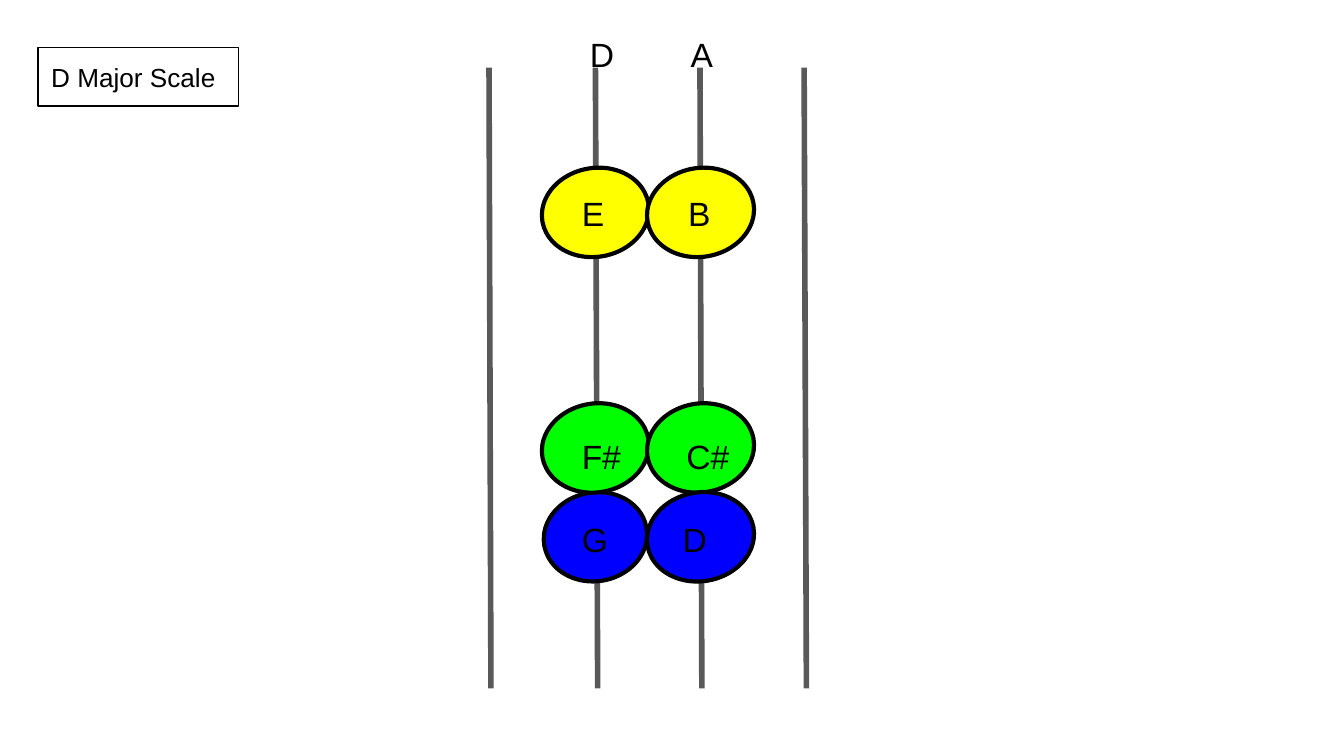
"""Build a fingering chart of the D major scale on the D and A strings."""
from dataclasses import dataclass

import pptx
import pptx.dml.color
import pptx.enum.shapes
import pptx.enum.text
import pptx.oxml
import pptx.oxml.ns
import pptx.util

Pt = pptx.util.Pt


@dataclass(frozen=True)
class Theme:
    font: str = "Arial"
    ink: str = "000000"
    string: str = "595959"
    first: str = "FFFF00"
    second: str = "00FF00"
    third: str = "0000FF"
    title_size: int = 14
    note_size: int = 18


THEME = Theme()


def rgb(value):
    return pptx.dml.color.RGBColor.from_string(value)


def add_run(p, text, size):
    r = p.add_run()
    r.text = text
    r.font.name = THEME.font
    r.font.size = Pt(size)
    r.font.color.rgb = rgb(THEME.ink)


def set_frame(tf, anchor):
    tf.word_wrap = True
    tf.vertical_anchor = anchor
    tf.margin_left = tf.margin_right = tf.margin_top = tf.margin_bottom = Pt(7.2)


def add_string(s, top_x, bottom_x):
    ln = s.shapes.add_connector(
        pptx.enum.shapes.MSO_CONNECTOR.STRAIGHT,
        Pt(top_x), Pt(36.2), Pt(bottom_x), Pt(368.8))
    ln.line.color.rgb = rgb(THEME.string)
    ln.line.width = Pt(3)
    ln._element.spPr.append(pptx.oxml.ns.qn("a:effectLst") and
                            pptx.oxml.parse_xml("<a:effectLst %s/>" % pptx.oxml.ns.nsdecls("a")))


def add_outlined(s, kind, box, fill, weight):
    sp = s.shapes.add_shape(kind, *map(Pt, box))
    sp.shadow.inherit = False
    if fill:
        sp.fill.solid()
        sp.fill.fore_color.rgb = rgb(fill)
    else:
        sp.fill.background()
    sp.line.color.rgb = rgb(THEME.ink)
    sp.line.width = Pt(weight)
    return sp


def add_title(s, text):
    sp = add_outlined(s, pptx.enum.shapes.MSO_SHAPE.RECTANGLE,
                      (20.3, 25.4, 107.4, 31.5), None, 0.75)
    set_frame(sp.text_frame, pptx.enum.text.MSO_ANCHOR.MIDDLE)
    p = sp.text_frame.paragraphs[0]
    p.alignment = pptx.enum.text.PP_ALIGN.LEFT
    add_run(p, text, THEME.title_size)


def add_finger(s, left, top, fill, width=57.6):
    sp = add_outlined(s, pptx.enum.shapes.MSO_SHAPE.OVAL, (left, top, width, 47.6), fill, 2.25)
    sp.rotation = -9.9


def add_text_box(s, box):
    tf = s.shapes.add_textbox(*map(Pt, box)).text_frame
    set_frame(tf, pptx.enum.text.MSO_ANCHOR.TOP)
    return tf


def add_string_name(s, left, width, text):
    tf = add_text_box(s, (left, 11, width, 21.6))
    add_run(tf.paragraphs[0], text, THEME.note_size)


def add_tab_stop(p, pos):
    p._p.get_or_add_pPr().append(pptx.oxml.parse_xml(
        '<a:tabLst %s><a:tab pos="%d" algn="l"/></a:tabLst>'
        % (pptx.oxml.ns.nsdecls("a"), Pt(pos))))


def add_notes(s, rows):
    tf = add_text_box(s, (304.6, 96.2, 244.8, 236.2))
    for i, (left_note, right_note, tab, gap) in enumerate(rows):
        p = tf.add_paragraph() if i else tf.paragraphs[0]
        p.space_before = Pt(gap)
        add_tab_stop(p, tab)
        add_run(p, left_note + "\t" + right_note, THEME.note_size)


def main():
    prs = pptx.Presentation()
    prs.slide_width, prs.slide_height = Pt(720), Pt(405)
    s = prs.slides.add_slide(prs.slide_layouts[6])

    for top_x, bottom_x in ((262, 263), (319, 320.2), (375, 376), (430.8, 432)):
        add_string(s, top_x, bottom_x)
    add_title(s, "D Major Scale")

    d_x, a_x = 290.2, 346.5
    first_y, second_y, third_y = 90, 216.2, 263.8
    add_finger(s, d_x, first_y, THEME.first)
    add_finger(s, d_x + 1, third_y, THEME.third, 55.6)
    add_finger(s, d_x, second_y, THEME.second)
    for y, fill in ((first_y, THEME.first), (second_y, THEME.second), (third_y, THEME.third)):
        add_finger(s, a_x, y, fill)

    add_string_name(s, 308.9, 20.2, "D")
    add_notes(s, (("E", "B", 57, 0), ("F#", "C#", 56, 108.5), ("G", "D", 54, 23)))
    add_string_name(s, 362.9, 25.2, "A")
    prs.save("out.pptx")


if __name__ == "__main__":
    main()
